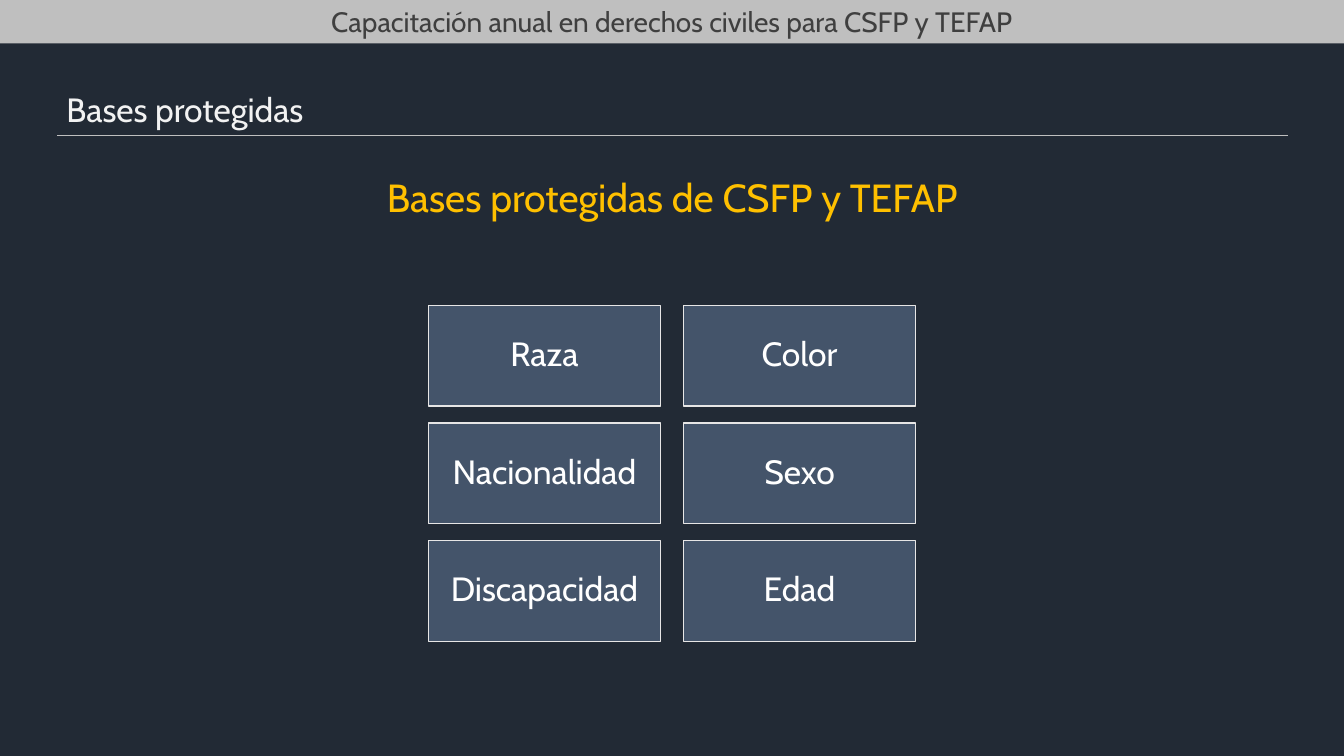
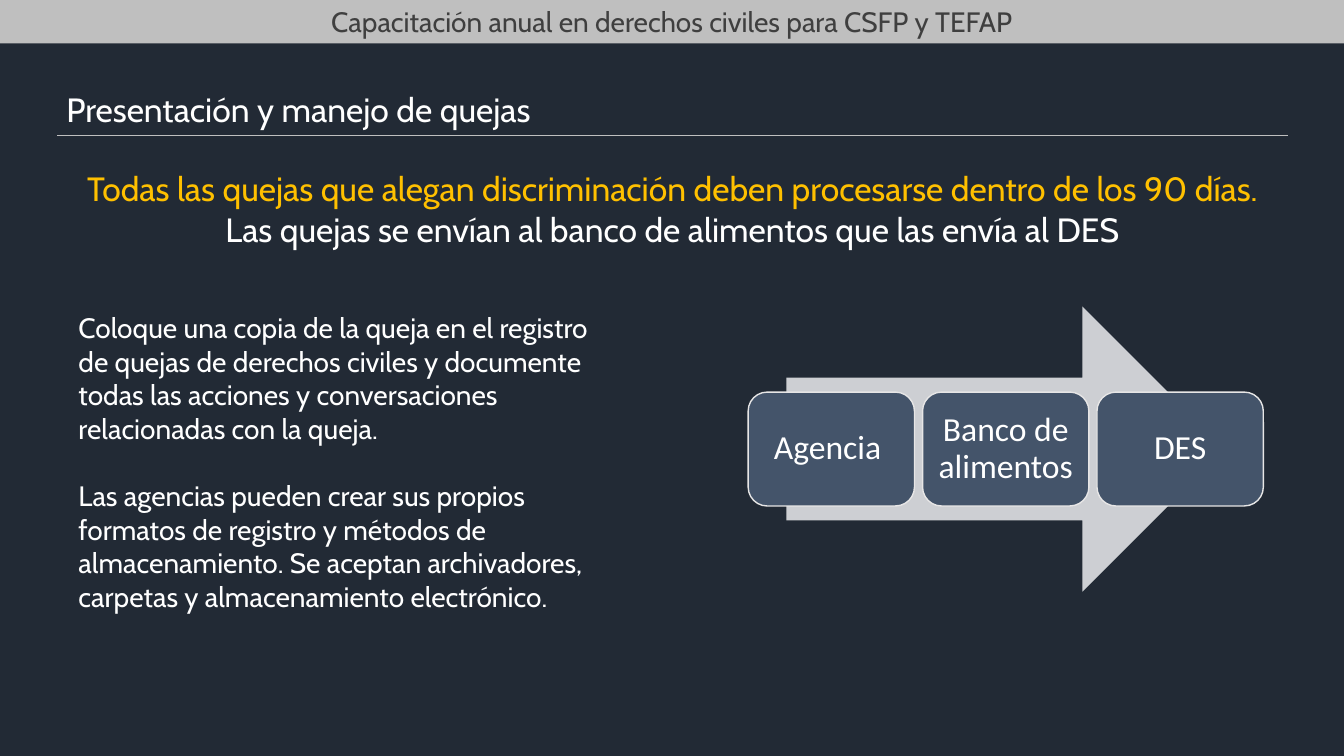
from pptx import Presentation
from pptx.dml.color import RGBColor
from pptx.enum.shapes import MSO_CONNECTOR, MSO_SHAPE
from pptx.enum.text import MSO_ANCHOR, PP_ALIGN
from pptx.oxml.ns import qn
from pptx.util import Inches, Pt
from lxml.etree import SubElement

COLORS = {
    "background": "222A35",
    "band": "BFBFBF",
    "band_text": "3F3F3F",
    "accent": "FFC000",
    "white": "FFFFFF",
    "title": "F2F2F2",
    "box": "44546A",
    "box_line": "E7E6E6",
    "arrow": "CDCFD3",
}
FONT = "Cabin"
COURSE = "Capacitación anual en derechos civiles para CSFP y TEFAP"


def color(name):
    return RGBColor.from_string(COLORS[name])


def write_text(shape, *lines, size=24, colors=("white",), font=FONT,
               align=PP_ALIGN.CENTER, anchor=MSO_ANCHOR.TOP,
               line_spacing=None, gap=0, margins=(0.1, 0.05)):
    frame = shape.text_frame
    frame.word_wrap = True
    frame.vertical_anchor = anchor
    frame.margin_left = frame.margin_right = Inches(margins[0])
    frame.margin_top = frame.margin_bottom = Inches(margins[1])
    for index, line in enumerate(lines):
        paragraph = frame.add_paragraph() if index else frame.paragraphs[0]
        paragraph.alignment = align
        paragraph.line_spacing = line_spacing
        paragraph.space_before = Pt(gap if index else 0)
        run = paragraph.add_run()
        run.text = line
        run.font.size = Pt(size)
        run.font.name = font
        run.font.color.rgb = color(colors[index % len(colors)])


def add_text(slide, left, top, width, height, *lines, **style):
    box = slide.shapes.add_textbox(
        Inches(left), Inches(top), Inches(width), Inches(height))
    write_text(box, *lines, **style)


def add_block(slide, kind, left, top, width, height, fill, line=None):
    shape = slide.shapes.add_shape(
        kind, Inches(left), Inches(top), Inches(width), Inches(height))
    shape.shadow.inherit = False
    shape.fill.solid()
    shape.fill.fore_color.rgb = color(fill)
    if line:
        shape.line.color.rgb = color(line)
        shape.line.width = Pt(1)
    else:
        shape.line.fill.background()
    return shape


def add_box(slide, kind, left, top, width, height, label, **style):
    box = add_block(slide, kind, left, top, width, height, "box", "box_line")
    write_text(box, label, anchor=MSO_ANCHOR.MIDDLE, line_spacing=0.9, **style)
    return box


def add_rule(slide, left, right, top):
    rule = slide.shapes.add_connector(
        MSO_CONNECTOR.STRAIGHT,
        Inches(left), Inches(top), Inches(right), Inches(top))
    rule.line.color.rgb = color("band")
    rule.line.width = Pt(0.75)
    SubElement(rule._element.spPr, qn("a:effectLst"))


def add_base_slide(presentation, title, title_color):
    slide = presentation.slides.add_slide(presentation.slide_layouts[6])
    slide.background.fill.solid()
    slide.background.fill.fore_color.rgb = color("background")
    band = add_block(slide, MSO_SHAPE.RECTANGLE, -0.01, 0, 13.35, 0.43, "band")
    write_text(band, COURSE, size=20, colors=("band_text",),
               anchor=MSO_ANCHOR.MIDDLE)
    add_text(slide, 0.56, 0.83, 12.21, 0.5, title, colors=(title_color,),
             align=PP_ALIGN.JUSTIFY)
    add_rule(slide, 0.57, 12.77, 1.34)
    return slide


def build_protected_bases(presentation):
    slide = add_base_slide(presentation, "Bases protegidas", "title")
    add_text(slide, 3.29, 1.67, 6.75, 1.31, "Bases protegidas de CSFP y TEFAP",
             size=28, colors=("accent",))
    bases = ["Raza", "Color", "Nacionalidad", "Sexo", "Discapacidad", "Edad"]
    for index, base in enumerate(bases):
        row, column = divmod(index, 2)
        add_box(slide, MSO_SHAPE.RECTANGLE, 4.25 + column * 2.53,
                3.03 + row * 1.167, 2.3, 1, base)


def build_complaints(presentation):
    slide = add_base_slide(presentation, "Presentación y manejo de quejas", "white")
    add_text(
        slide, 0.08, 1.62, 13.18, 0.9,
        "Todas las quejas que alegan discriminación deben procesarse dentro de los 90 días.",
        "Las quejas se envían al banco de alimentos que las envía al DES",
        colors=("accent", "white"))
    add_text(
        slide, 0.68, 3.03, 5.59, 3.1,
        "Coloque una copia de la queja en el registro de quejas de derechos civiles "
        "y documente todas las acciones y conversaciones relacionadas con la queja.",
        "Las agencias pueden crear sus propios formatos de registro y métodos de "
        "almacenamiento. Se aceptan archivadores, carpetas y almacenamiento electrónico.",
        size=20, align=PP_ALIGN.LEFT, gap=24)
    add_block(slide, MSO_SHAPE.RIGHT_ARROW, 7.8, 3.04, 4.35, 2.83, "arrow")
    for index, step in enumerate(["Agencia ", "Banco de alimentos", "DES"]):
        add_box(slide, MSO_SHAPE.ROUNDED_RECTANGLE, 7.42 + index * 1.73, 3.89,
                1.65, 1.13, step, font="Calibri", margins=(0.08, 0.05))


def main():
    presentation = Presentation()
    presentation.slide_width = Inches(13.33)
    presentation.slide_height = Inches(7.5)
    build_protected_bases(presentation)
    build_complaints(presentation)
    presentation.save("out.pptx")


if __name__ == "__main__":
    main()
